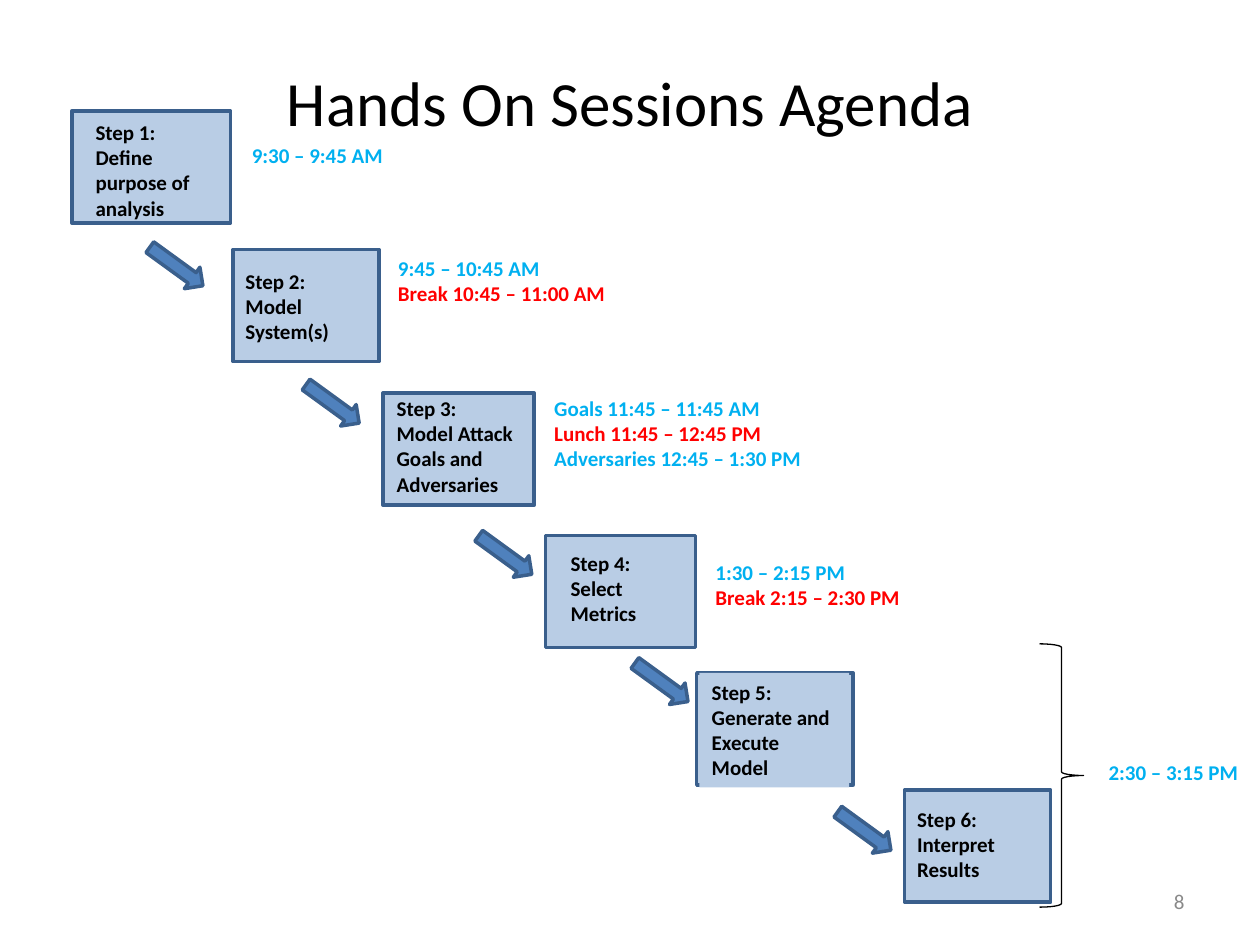
from pptx import Presentation
from pptx import util as u
from pptx.dml.color import RGBColor
from pptx.enum import shapes, text

BLACK = RGBColor(0x00, 0x00, 0x00)
GRAY = RGBColor(0x89, 0x89, 0x89)
SKY = RGBColor(0x00, 0xB0, 0xF0)
RED = RGBColor(0xFF, 0x00, 0x00)
PALE = RGBColor(0xB9, 0xCD, 0xE5)
BLUE = RGBColor(0x4F, 0x81, 0xBD)
EDGE = RGBColor(0x3A, 0x5F, 0x8C)

deck = Presentation()
deck.slide_width, deck.slide_height = u.Inches(10), u.Inches(7.5)
page = deck.slides.add_slide(deck.slide_layouts[6])


def add_shape(kind, place, fill, line, width):
    shape = page.shapes.add_shape(kind, *map(u.Inches, place))
    shape.shadow.inherit = False
    if fill is None:
        shape.fill.background()
    else:
        shape.fill.solid()
        shape.fill.fore_color.rgb = fill
    shape.line.color.rgb = line
    shape.line.width = u.Pt(width)
    return shape


def add_text(place, lines, size=12, bold=True, align=text.PP_ALIGN.LEFT,
             anchor=text.MSO_ANCHOR.TOP):
    """Each line is (words, colour); a newline becomes a line break."""
    box = page.shapes.add_textbox(*map(u.Inches, place))
    frame = box.text_frame
    frame.word_wrap = True
    frame.vertical_anchor = anchor
    for i, (words, color) in enumerate(lines):
        para = frame.paragraphs[0] if i == 0 else frame.add_paragraph()
        para.alignment = align
        for j, part in enumerate(words.split("\n")):
            if j:
                para.add_line_break()
            span = para.add_run()
            span.text = part
            span.font.name = "Calibri"
            span.font.size = u.Pt(size)
            span.font.bold = bold
            span.font.color.rgb = color
    return box


# Title and page number
add_text((0.5, 0.53, 9, 0.55), [("Hands On Sessions Agenda", BLACK)], 36, False,
         text.PP_ALIGN.CENTER, text.MSO_ANCHOR.MIDDLE)
add_text((7.17, 6.95, 2.33, 0.4), [("8", GRAY)], 12, False,
         text.PP_ALIGN.RIGHT, text.MSO_ANCHOR.MIDDLE)

# Steps: box left, top, width; label place; label paragraphs
steps = [
    (0.57, 0.88, 1.26, (0.66, 0.9, 1.21, 0.91), ["Step 1:", "Define purpose of analysis"]),
    (1.85, 1.98, 1.16, (1.85, 2.08, 1.17, 0.71), ["Step 2:", "Model System(s)"]),
    (3.04, 3.12, 1.2, (3.05, 3.09, 1.53, 0.91),
     ["Step 3:", "Model Attack Goals and", "Adversaries"]),
    (4.33, 4.25, 1.19, (4.43, 4.32, 1.12, 0.71), ["Step 4:\nSelect Metrics"]),
    (5.53, 5.34, 1.24, (5.55, 5.34, 1.19, 0.91), ["Step 5:", "Generate and Execute Model"]),
    (7.18, 6.27, 1.16, (7.18, 6.35, 1.29, 0.71), ["Step 6:\nInterpret Results"]),
]
for left, top, width, place, words in steps:
    add_shape(shapes.MSO_SHAPE.RECTANGLE, (left, top, width, 0.89), PALE, EDGE, 2)
    label = add_text(place, [(line, BLACK) for line in words])
    if words[0] == "Step 5:":  # this label is filled and covers the lower edge
        label.fill.solid()
        label.fill.fore_color.rgb = PALE

# Arrows between the steps
for left, top in [(1.14, 2.01), (2.38, 3.1), (3.75, 4.3), (4.99, 5.31), (6.6, 6.49)]:
    arrow = add_shape(shapes.MSO_SHAPE.RIGHT_ARROW, (left, top, 0.52, 0.21), BLUE, EDGE, 2)
    arrow.rotation = 36

# Session times
times = [
    ((1.9, 1.08, 3.6, 0.3), [("9:30 – 9:45 AM", SKY)]),
    ((3.06, 1.98, 6.94, 0.51), [("9:45 – 10:45 AM", SKY), ("Break 10:45 – 11:00 AM", RED)]),
    ((4.3, 3.09, 5.55, 0.71), [("Goals 11:45 – 11:45 AM", SKY),
                               ("Lunch 11:45 – 12:45 PM", RED),
                               ("Adversaries 12:45 – 1:30 PM", SKY)]),
    ((5.58, 4.39, 4.42, 0.5), [("1:30 – 2:15 PM", SKY), ("Break 2:15 – 2:30 PM", RED)]),
    ((8.7, 5.98, 1.3, 0.51), [("2:30 – 3:15 PM", SKY)]),
]
for place, lines in times:
    add_text(place, lines)

# Brace joining the last two steps
add_shape(shapes.MSO_SHAPE.RIGHT_BRACE, (8.25, 5.11, 0.35, 2.09), None, BLACK, 0.75)

deck.save("out.pptx")
